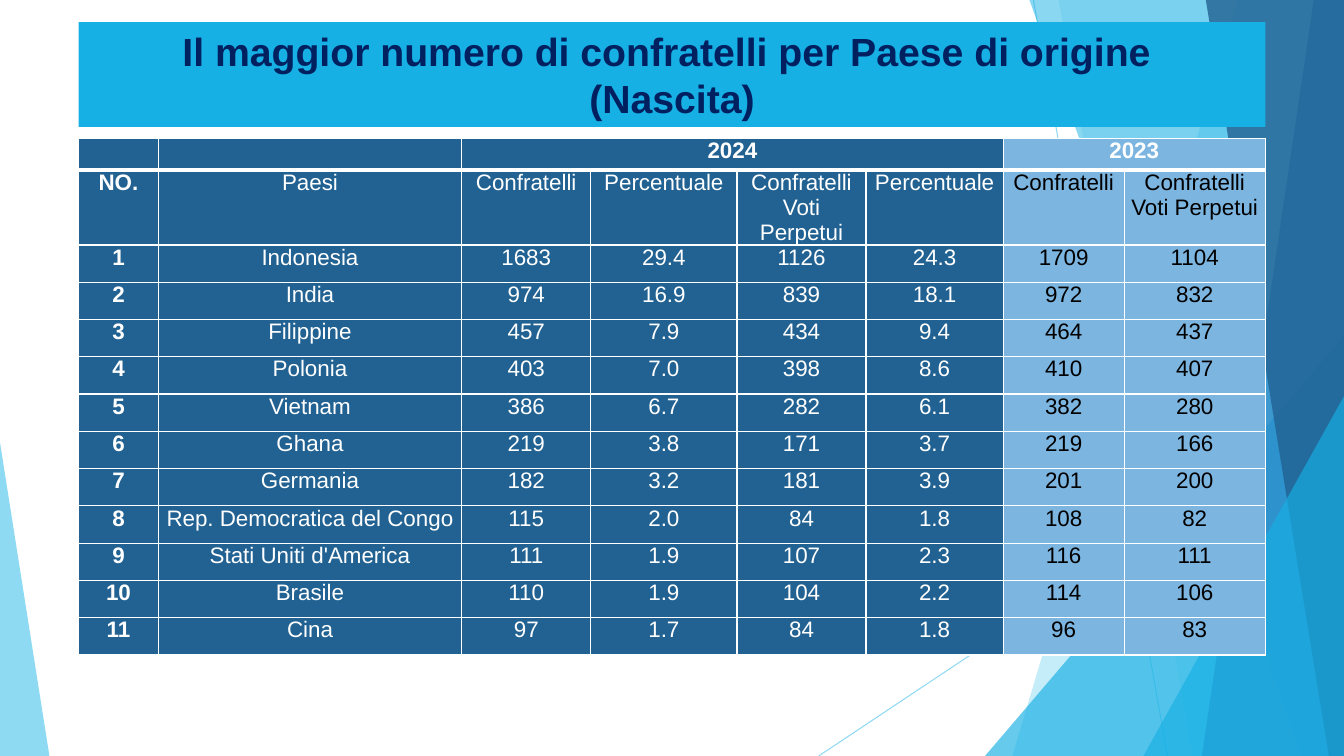
from lxml.etree import SubElement
from pptx import Presentation
from pptx.dml.color import RGBColor
from pptx.enum.shapes import MSO_CONNECTOR, MSO_SHAPE
from pptx.enum.text import MSO_ANCHOR, MSO_AUTO_SIZE, PP_ALIGN
from pptx.oxml import parse_xml
from pptx.oxml.ns import nsdecls, qn
from pptx.util import Inches, Pt

WIDTH, HEIGHT = 13.33, 7.5
LEFT, TABLE_WIDTH = 0.78, 11.77
NAVY, LIGHT, CYAN, SKY, WHITE = "226292", "7CB5E0", "17B0E4", "5FCBEF", "FFFFFF"

TITLE = ["Il maggior numero di confratelli per Paese di origine ", "(Nascita)"]
YEARS = ["", "", "2024", "", "", "", "2023", ""]
YEAR_SPANS = [(2, 5), (6, 7)]
HEADINGS = ["NO.", "Paesi", "Confratelli", "Percentuale", "Confratelli Voti Perpetui",
            "Percentuale", "Confratelli", "Confratelli Voti Perpetui"]
COUNTRIES = [
    ("Indonesia", "1683", "29.4", "1126", "24.3", "1709", "1104"),
    ("India", "974", "16.9", "839", "18.1", "972", "832"),
    ("Filippine", "457", "7.9", "434", "9.4", "464", "437"),
    ("Polonia", "403", "7.0", "398", "8.6", "410", "407"),
    ("Vietnam", "386", "6.7", "282", "6.1", "382", "280"),
    ("Ghana", "219", "3.8", "171", "3.7", "219", "166"),
    ("Germania", "182", "3.2", "181", "3.9", "201", "200"),
    ("Rep. Democratica del Congo", "115", "2.0", "84", "1.8", "108", "82"),
    ("Stati Uniti d'America", "111", "1.9", "107", "2.3", "116", "111"),
    ("Brasile", "110", "1.9", "104", "2.2", "114", "106"),
    ("Cina", "97", "1.7", "84", "1.8", "96", "83"),
]
COLUMNS = [0.79, 3.01, 1.28, 1.45, 1.28, 1.36, 1.2, 1.4]
ROWS = [0.32, 0.74] + [0.37] * len(COUNTRIES)
FIRST_2023 = 6

RAYS = [((10.25, 0), (11.58, HEIGHT)), ((WIDTH, 4.03), (8.12, HEIGHT))]
BANDS = [
    ("band", 12.28, 10.04, SKY, 36),
    ("band", 10.5, 11.83, SKY, 20),
    ("triangle", 9.77, 3.33, 3.56, 1, CYAN, 66),
    ("band", 10.21, 12.91, CYAN, 50),
    ("band", 13.03, 11.92, "2E83C3", 70),
    ("band", 11.96, 13.18, NAVY, 80),
    ("triangle", 11.34, 3.93, 1.99, 1, CYAN, 66),
    ("triangle", 0, 4.39, 0.49, 0, SKY, 70),
]


def colour(hex_code):
    """Turn a hex string into a colour."""
    return RGBColor.from_string(hex_code)


def set_alpha(element, percent):
    """Make the colour inside an element partly transparent."""
    SubElement(next(element.iter(qn("a:srgbClr"))), qn("a:alpha"), val=str(percent * 1000))


def write(frame, lines, size, hex_code, bold=False, after=0):
    """Fill a text frame with centred lines in one format."""
    for index, line in enumerate(lines):
        paragraph = frame.add_paragraph() if index else frame.paragraphs[0]
        paragraph.alignment = PP_ALIGN.CENTER
        paragraph.space_after = Pt(after)
        if not line:
            SubElement(paragraph._p, qn("a:endParaRPr"), sz=str(size * 100))
            continue
        run = paragraph.add_run()
        run.text = line
        run.font.name, run.font.size, run.font.bold = "Arial", Pt(size), bold
        run.font.color.rgb = colour(hex_code)


def set_borders(cell, top, bottom):
    """Draw white borders round a cell, with the top and bottom widths in points."""
    properties = cell._tc.get_or_add_tcPr()
    for index, (side, width) in enumerate(zip("LRTB", (1, 1, top, bottom))):
        properties.insert(index, parse_xml(
            f'<a:ln{side} {nsdecls("a")} w="{Pt(width)}"><a:solidFill>'
            f'<a:srgbClr val="{WHITE}"/></a:solidFill></a:ln{side}>'))


def add_ray(slide, start, end):
    """Draw one thin translucent line."""
    ray = slide.shapes.add_connector(
        MSO_CONNECTOR.STRAIGHT, *(Inches(value) for value in start + end))
    ray.line.color.rgb, ray.line.width = colour(SKY), Pt(0.75)
    set_alpha(ray.line._ln, 70)
    SubElement(ray._element.spPr, qn("a:effectLst"))


def add_band(slide, kind, *values):
    """Draw one translucent band or triangle at the slide's edge."""
    *place, hex_code, alpha = values
    if kind == "band":
        top_x, bottom_x = place
        outline = slide.shapes.build_freeform(Inches(top_x), 0, scale=1.0)
        outline.add_line_segments(
            [(Inches(x), Inches(y)) for x, y in
             ((WIDTH, 0), (WIDTH, HEIGHT), (bottom_x, HEIGHT))], close=True)
        band = outline.convert_to_shape()
    else:
        left, top, width, apex = place
        band = slide.shapes.add_shape(
            MSO_SHAPE.ISOSCELES_TRIANGLE, Inches(left), Inches(top),
            Inches(width), Inches(HEIGHT - top))
        band.adjustments[0] = apex
    band.shadow.inherit = False
    band.fill.solid()
    band.fill.fore_color.rgb = colour(hex_code)
    band.line.fill.background()
    set_alpha(band._element.spPr, alpha)


def add_table(slide):
    """Build the table of countries."""
    table = slide.shapes.add_table(
        len(ROWS), len(COLUMNS), Inches(LEFT), Inches(1.37),
        Inches(TABLE_WIDTH), Inches(sum(ROWS))).table
    table.horz_banding = False
    for column, width in zip(table.columns, COLUMNS):
        column.width = Inches(width)
    for row, height in zip(table.rows, ROWS):
        row.height = Inches(height)
    numbered = [(str(number), *country) for number, country in enumerate(COUNTRIES, 1)]
    for r, texts in enumerate([YEARS, HEADINGS, *numbered]):
        for c, text in enumerate(texts):
            cell = table.cell(r, c)
            recent = c < FIRST_2023
            cell.margin_left = cell.margin_right = Inches(0.07)
            cell.margin_top = cell.margin_bottom = 0
            cell.fill.solid()
            cell.fill.fore_color.rgb = colour(NAVY if recent else LIGHT)
            set_borders(cell, 3 if r == 1 else 1, 3 if r == 0 else 1)
            write(cell.text_frame, [text], 16, WHITE if recent or r == 0 else "000000",
                  bold=r == 0 or c == 0, after=10)
    for first, last in YEAR_SPANS:
        table.cell(0, first).merge(table.cell(0, last))


def add_title(slide):
    """Place the title bar in front of the bands."""
    title = slide.shapes.title
    title.left, title.top = Inches(LEFT), Inches(0.22)
    title.width, title.height = Inches(TABLE_WIDTH), Inches(1.04)
    title.fill.solid()
    title.fill.fore_color.rgb = colour(CYAN)
    frame = title.text_frame
    frame.word_wrap, frame.auto_size = True, MSO_AUTO_SIZE.NONE
    frame.vertical_anchor = MSO_ANCHOR.MIDDLE
    write(frame, TITLE, 28, "002060", bold=True)
    title.element.getparent().append(title.element)


def main():
    """Build and save the slide."""
    deck = Presentation()
    deck.slide_width, deck.slide_height = Inches(WIDTH), Inches(HEIGHT)
    slide = deck.slides.add_slide(deck.slide_layouts[5])
    for start, end in RAYS:
        add_ray(slide, start, end)
    for band in BANDS:
        add_band(slide, *band)
    add_table(slide)
    add_title(slide)
    deck.save("out.pptx")


if __name__ == "__main__":
    main()
